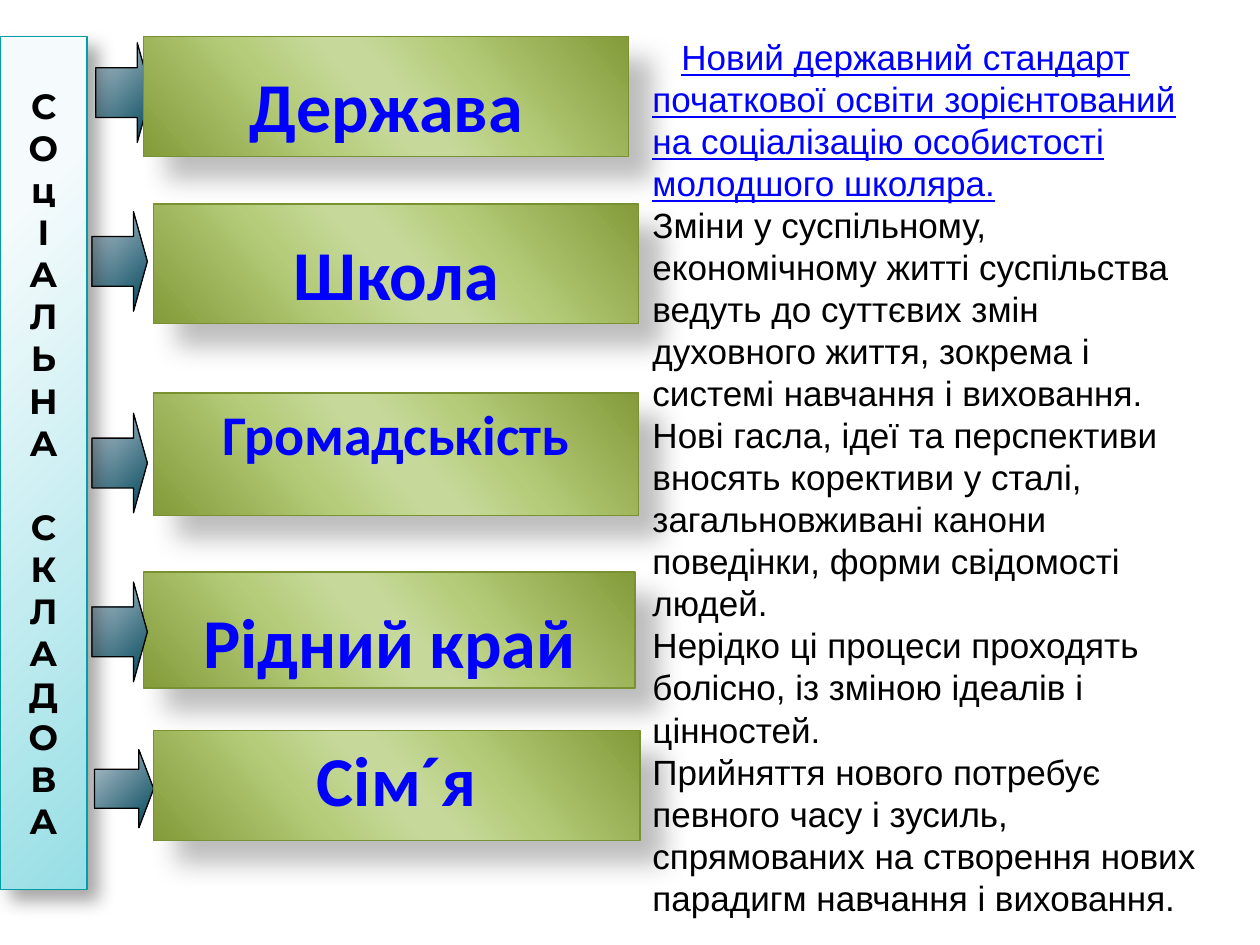
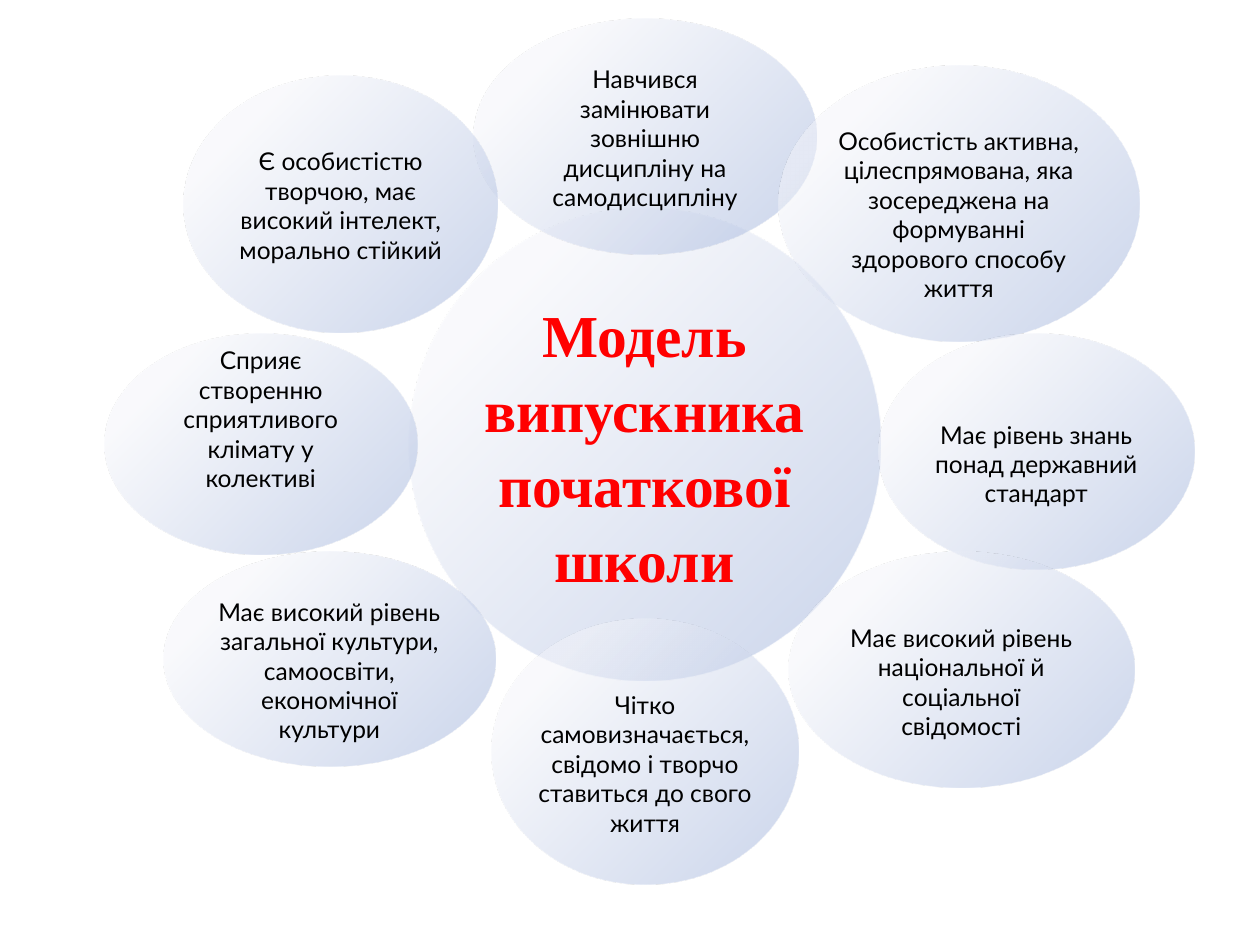
import pptx
import pptx.util
import pptx.dml.color
import pptx.enum.shapes
import pptx.enum.text
import pptx.oxml
import pptx.oxml.ns

Inches = pptx.util.Inches
Pt = pptx.util.Pt
RGBColor = pptx.dml.color.RGBColor
SHAPE = pptx.enum.shapes.MSO_SHAPE
ANCHOR = pptx.enum.text.MSO_ANCHOR
ALIGN = pptx.enum.text.PP_ALIGN

# Colours
BLACK = RGBColor(0x00, 0x00, 0x00)
WHITE = RGBColor(0xFF, 0xFF, 0xFF)
BLUE = RGBColor(0x00, 0x00, 0xFF)
RED = RGBColor(0xFF, 0x00, 0x00)
OLIVE = RGBColor(0x84, 0x9B, 0x3A)
OLIVE_LINE = RGBColor(0x7A, 0x91, 0x31)
LIME = RGBColor(0xB5, 0xCC, 0x7A)
PALE_LIME = RGBColor(0xC6, 0xD9, 0x9A)
STEEL = RGBColor(0xB7, 0xC6, 0xD1)
PETROL = RGBColor(0x00, 0x46, 0x5A)
ICE = RGBColor(0xF5, 0xFB, 0xFC)
AQUA = RGBColor(0x97, 0xDF, 0xE5)
TEAL = RGBColor(0x01, 0x9E, 0xA5)
MIST = RGBColor(0xF5, 0xF6, 0xFB)
PERIWINKLE = RGBColor(0x97, 0xAC, 0xD9)

# Gradients: stops as (position %, colour), then the direction
LINEAR = '<a:lin ang="8350000" scaled="1"/>'
CORNER = '<a:path path="circle"><a:fillToRect r="100000" b="100000"/></a:path>'
OUTER_CORNER = ('<a:path path="circle"><a:fillToRect l="-15000" t="-15000" '
                'r="115000" b="115000"/></a:path>')
OLIVE_SHEEN = ([(0, OLIVE), (33, LIME), (47, PALE_LIME), (53, PALE_LIME),
                (68, LIME), (100, OLIVE)], LINEAR)
STEEL_FADE = ([(0, STEEL), (100, PETROL)], CORNER)
AQUA_FADE = ([(20, ICE), (100, AQUA)], OUTER_CORNER)
PETAL_FADE = ([(20, MIST), (100, PERIWINKLE)], OUTER_CORNER)

# Shadows: opacity %, blur pt, distance pt
BLOCK_SHADOW = (26, 15, 18)
BAR_SHADOW = (35, 10.2, 8)


def make_element(xml):
    namespace = pptx.oxml.ns.nsdecls("a")
    return pptx.oxml.parse_xml(xml.replace(">", f" {namespace}>", 1))


def set_gradient(shape, gradient, opacity):
    stops, direction = gradient
    stop_xml = "".join(
        f'<a:gs pos="{position * 1000}"><a:srgbClr val="{color}">'
        f'<a:alpha val="{opacity * 1000}"/></a:srgbClr></a:gs>'
        for position, color in stops)
    shape.fill.solid()
    solid = shape._element.spPr.find(pptx.oxml.ns.qn("a:solidFill"))
    solid.getparent().replace(solid, make_element(
        f"<a:gradFill><a:gsLst>{stop_xml}</a:gsLst>{direction}</a:gradFill>"))


def set_shadow(shape, shadow):
    opacity, blur, distance = shadow
    effects = shape._element.spPr.find(pptx.oxml.ns.qn("a:effectLst"))
    effects.append(make_element(
        f'<a:outerShdw blurRad="{Pt(blur)}" dist="{Pt(distance)}" dir="2700000" '
        f'algn="tl" rotWithShape="0"><a:srgbClr val="{BLACK}">'
        f'<a:alpha val="{opacity * 1000}"/></a:srgbClr></a:outerShdw>'))


def add_figure(slide, kind, box, gradient, line=None, shadow=None, opacity=100):
    figure = slide.shapes.add_shape(kind, *map(Inches, box))
    figure.shadow.inherit = False
    set_gradient(figure, gradient, opacity)
    if line is None:
        figure.line.fill.background()
    else:
        figure.line.color.rgb = line
        figure.line.width = Pt(0.75)
    if shadow:
        set_shadow(figure, shadow)
    return figure


def set_frame(shape, anchor=ANCHOR.TOP, margins=(0.1, 0.05, 0.1, 0.05), wrap=True):
    frame = shape.text_frame
    frame.word_wrap = wrap
    frame.auto_size = pptx.enum.text.MSO_AUTO_SIZE.NONE
    frame.vertical_anchor = anchor
    (frame.margin_left, frame.margin_top,
     frame.margin_right, frame.margin_bottom) = map(Inches, margins)
    return frame


def write(frame, text, *, size, font, color, bold=False, underline=False,
          align=ALIGN.CENTER, first=True, spacing=None):
    """Write one paragraph: the first of the frame, or one more after it."""
    paragraph = frame.paragraphs[0] if first else frame.add_paragraph()
    paragraph.alignment = align
    paragraph.line_spacing = spacing
    run = paragraph.add_run()
    run.text = text
    run.font.size = Pt(size)
    run.font.name = font
    run.font.bold = bold
    run.font.underline = underline
    run.font.color.rgb = color
    return paragraph


# Slide 1: social component
def add_block(slide, text, box, size=40, top=0.21):
    block = add_figure(slide, SHAPE.RECTANGLE, box, OLIVE_SHEEN, OLIVE_LINE, BLOCK_SHADOW)
    frame = set_frame(block, margins=(0.1, top, 0.1, 0.05))
    write(frame, text, size=size, font="Calibri", color=BLUE, bold=True)


def add_arrow(slide, left, top, width=0.44, height=0.79):
    arrow = add_figure(slide, SHAPE.RIGHT_ARROW, (left, top, width, height),
                       STEEL_FADE, BLACK)
    arrow.adjustments[0] = 0.5
    arrow.adjustments[1] = 0.25


def add_component_bar(slide):
    bar = add_figure(slide, SHAPE.RECTANGLE, (0, 0.29, 0.69, 6.77),
                     AQUA_FADE, TEAL, BAR_SHADOW)
    frame = set_frame(bar, anchor=ANCHOR.MIDDLE, wrap=False)
    frame._txBody.bodyPr.set("vert", "wordArtVert")
    label = write(frame, "СОцІАЛЬНА СКЛАДОВА", size=20, font="Montserrat",
                  color=BLACK, bold=True)
    letters = label.runs[0].font._element
    letters.set("spc", "-150")
    letters.insert(0, make_element(
        f'<a:ln w="{Pt(1.42)}"><a:solidFill><a:srgbClr val="{WHITE}"/></a:solidFill></a:ln>'))


def add_standard_text(slide):
    box = slide.shapes.add_textbox(*map(Inches, (5.08, 0.2, 4.61, 7.17)))
    frame = set_frame(box, anchor=ANCHOR.MIDDLE)
    style = dict(size=20, font="Arial", align=ALIGN.LEFT)
    standard = write(frame, "Новий державний стандарт початкової освіти зорієнтований "
                     "на соціалізацію особистості молодшого школяра.",
                     color=BLUE, underline=True, **style)
    standard._p.get_or_add_pPr().set("indent", str(Inches(0.23)))
    changes = (
        "Зміни у суспільному, економічному житті суспільства ведуть до суттєвих змін "
        "духовного життя, зокрема і системі навчання і виховання. Нові гасла, ідеї та "
        "перспективи вносять корективи у сталі, загальновживані канони поведінки, "
        "форми свідомості людей.",
        "Нерідко ці процеси проходять болісно, із зміною ідеалів і цінностей.",
        "Прийняття нового потребує певного часу і зусиль, спрямованих на створення "
        "нових парадигм навчання і виховання.",
    )
    for change in changes:
        write(frame, change, color=BLACK, first=False, **style)


def build_social_slide(deck):
    slide = deck.slides.add_slide(deck.slide_layouts[6])
    add_standard_text(slide)
    add_block(slide, "Школа", (1.22, 1.62, 3.85, 0.95))
    add_block(slide, "Громадськість", (1.22, 3.12, 3.85, 0.97), size=32, top=0.05)
    add_block(slide, "Рідний край", (1.14, 4.54, 3.9, 0.92))
    add_arrow(slide, 0.76, 0.34)
    for top in (1.68, 3.28, 4.62):
        add_arrow(slide, 0.73, top)
    add_component_bar(slide)
    add_arrow(slide, 0.75, 5.95, 0.47, 0.62)
    add_block(slide, "Сім´я", (1.22, 5.8, 3.86, 0.87), top=0.05)
    add_block(slide, "Держава", (1.14, 0.29, 3.85, 0.95))


# Slide 2: model of the graduate
# Each trait: text, box, side, top and bottom margins
TRAITS = [
    ("Навчився замінювати зовнішню дисципліну на самодисципліну",
     (3.76, 0.15, 2.72, 1.87), 0.05, 0.03, 0.01),
    ("Особистість активна, цілеспрямована, яка зосереджена на формуванні "
     "здорового способу життя", (6.18, 0.52, 2.86, 2.19), 0.01, 0.18, 0.01),
    ("Має рівень знань понад державний стандарт",
     (6.97, 2.65, 2.51, 1.87), 0.01, 0.2, 0.01),
    ("Має високий рівень національної й соціальної свідомості",
     (6.26, 4.38, 2.74, 1.87), 0.01, 0.2, 0.01),
    ("Чітко самовизначається, свідомо і творчо ставиться до свого життя",
     (3.9, 4.91, 2.44, 2.11), 0.01, 0.2, 0.01),
    ("Має високий рівень загальної культури, самоосвіти, економічної культури",
     (1.3, 4.38, 2.63, 1.7), 0.02, 0.2, 0.02),
    ("Сприяє створенню сприятливого клімату у колективі",
     (0.83, 2.65, 2.48, 1.75), 0.1, 0.02, 0.42),
    ("Є особистістю творчою, має високий інтелект, морально стійкий",
     (1.46, 0.6, 2.49, 2.04), 0.01, 0.03, 0.01),
]


def add_petal(slide, box):
    return add_figure(slide, SHAPE.OVAL, box, PETAL_FADE, opacity=50)


def add_model_title(slide):
    title = slide.shapes.title
    title.left, title.top, title.width, title.height = map(Inches, (3.79, 2.2, 2.65, 2.65))
    frame = set_frame(title, anchor=ANCHOR.MIDDLE, margins=(0.05,) * 4)
    for index, line in enumerate(("Модель випускника", "початкової школи")):
        write(frame, line, size=34, font="Times New Roman", color=RED, bold=True,
              first=index == 0, spacing=1.05)
    # Bring the title in front of the central circle
    slide.shapes._spTree.append(title._element)


def build_model_slide(deck):
    slide = deck.slides.add_slide(deck.slide_layouts[5])
    add_petal(slide, (3.24, 1.65, 3.75, 3.75))
    add_model_title(slide)
    for text, box, side, top, bottom in TRAITS:
        petal = add_petal(slide, box)
        frame = set_frame(petal, anchor=ANCHOR.MIDDLE, margins=(side, top, side, bottom))
        write(frame, text, size=14, font="Lato", color=BLACK)


def main():
    deck = pptx.Presentation()
    deck.slide_width, deck.slide_height = Inches(10), Inches(7.5)
    build_social_slide(deck)
    build_model_slide(deck)
    deck.save("out.pptx")


if __name__ == "__main__":
    main()
